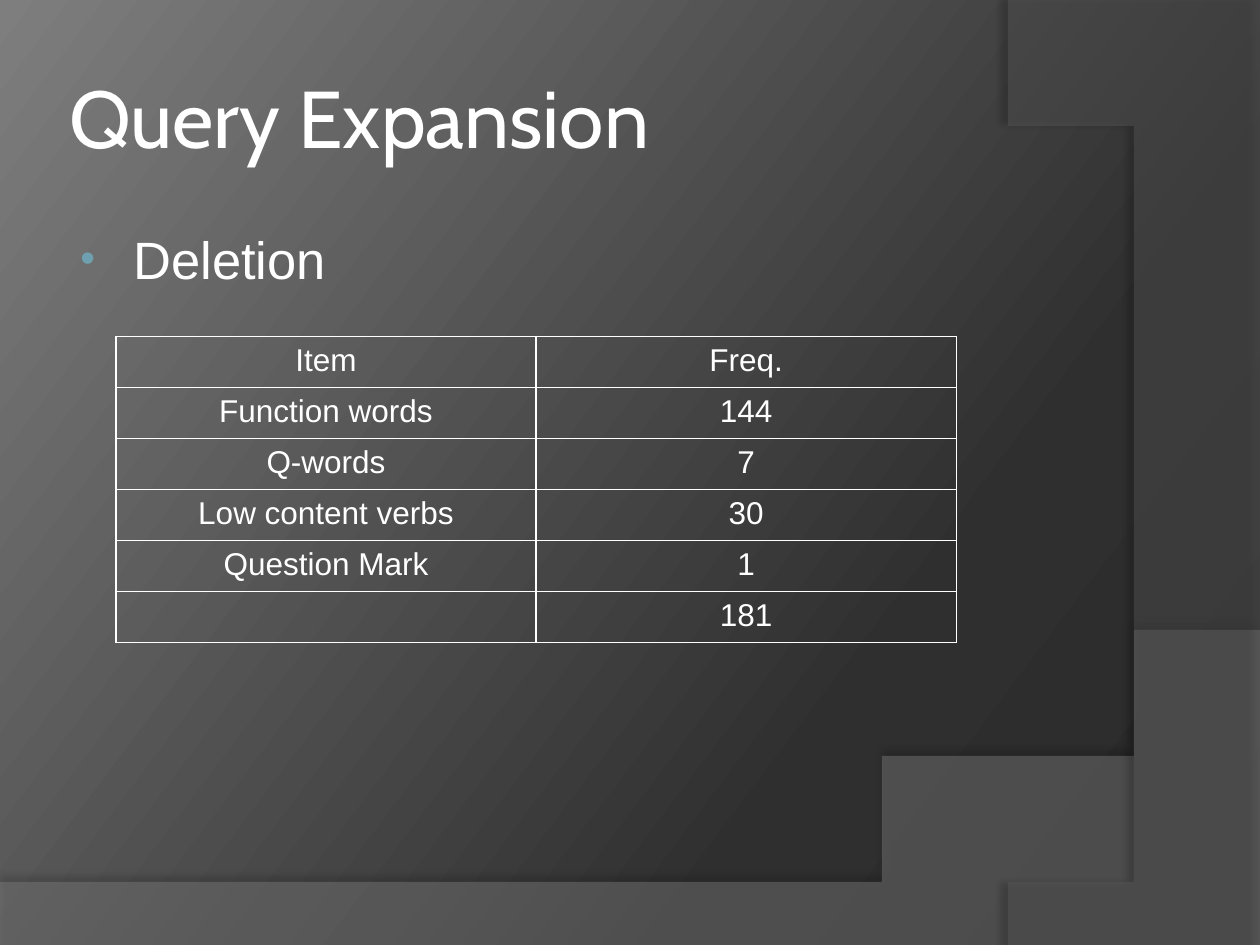
from copy import deepcopy
from lxml import etree
from pptx import Presentation
from pptx.dml.color import RGBColor
from pptx.enum.text import MSO_ANCHOR, PP_ALIGN
from pptx.oxml.ns import nsdecls, qn
from pptx.util import Emu, Inches, Pt

WIDTH, HEIGHT = 10, 7.5
WHITE = "FFFFFF"
TITLE = "Query Expansion"
BULLET = "Deletion"
FREQUENCIES = [
    ("Item", "Freq."),
    ("Function words", "144"),
    ("Q-words", "7"),
    ("Low content verbs", "30"),
    ("Question Mark", "1"),
    ("", "181"),
]
BACKDROP = [(0, "282828"), (0.3, "2F2F2F"), (1, "7E7E7E")]
WAVES = [
    {"outline": [[(0, 7.05)], [(0, 7.5)], [(10, 7.5)], [(10, 5.2)],
                 [(5.59, 7.29), (3.91, 7.19), (0, 7.05)]],
     "fill": "7F7F7F", "opacity": 45, "shade": 35, "distance": 3.5, "direction": 270},
    {"outline": [[(10, 0.02)], [(10, 7.5)], [(8.21, 7.5)],
                 [(9.35, 6.19), (10.18, 3), (8, 0)]],
     "fill": "5E5E5E", "opacity": 40, "shade": 45, "distance": 4, "direction": 180},
]
CURVE_STEPS = 40


def color(value):
    return RGBColor.from_string(value)


def add_xml(parent, xml):
    tag, rest = xml[1:].split(" ", 1)
    parent.append(etree.fromstring(f"<{tag} {nsdecls('a')} {rest}"))


def style(paragraph, size, font):
    for run in paragraph.runs:
        run.font.size = Pt(size)
        run.font.name = font
        run.font.color.rgb = color(WHITE)


def bezier(controls, t):
    while len(controls) > 1:
        controls = [tuple(a + (b - a) * t for a, b in zip(p, q))
                    for p, q in zip(controls, controls[1:])]
    return controls[0]


def trace(outline):
    points = list(outline[0])
    for segment in outline[1:]:
        controls = [points[-1], *segment]
        steps = CURVE_STEPS if len(segment) > 1 else 1
        points += [bezier(controls, i / steps) for i in range(1, steps + 1)]
    return points


def paint_backdrop(slide):
    fill = slide.background.fill
    fill.gradient()
    fill.gradient_angle = 360 - 217
    stop_list = slide._element.find(".//" + qn("a:gsLst"))
    stop_list.append(deepcopy(stop_list[-1]))
    for stop, (position, shade) in zip(fill.gradient_stops, BACKDROP):
        stop.position = position
        stop.color.rgb = color(shade)


def add_wave(slide, wave):
    start, *others = trace(wave["outline"])
    builder = slide.shapes.build_freeform(*start, scale=Inches(1))
    builder.add_line_segments(others, close=True)
    shape = builder.convert_to_shape()
    shape.fill.solid()
    shape.fill.fore_color.rgb = color(wave["fill"])
    shape.line.fill.background()
    shape.shadow.inherit = False
    properties = shape._element.spPr
    add_xml(properties.find(".//" + qn("a:srgbClr")), f'<a:alpha val="{wave["opacity"] * 1000}"/>')
    add_xml(properties.find(qn("a:effectLst")),
            f'<a:outerShdw blurRad="{Pt(4)}" dist="{Pt(wave["distance"])}" '
            f'dir="{wave["direction"] * 60000}" algn="ctr" rotWithShape="0">'
            f'<a:srgbClr val="000000"><a:alpha val="{wave["shade"] * 1000}"/></a:srgbClr>'
            '</a:outerShdw>')


def add_text(slide, text, top, height, anchor, size, font):
    box = slide.shapes.add_textbox(Inches(0.5), Inches(top), Inches(8.17), Inches(height))
    frame = box.text_frame
    frame.word_wrap = True
    frame.vertical_anchor = anchor
    frame.margin_left = frame.margin_right = Inches(0.05)
    frame.text = text
    style(frame.paragraphs[0], size, font)
    return frame


def add_bullet(frame):
    frame.margin_left = frame.margin_right = Inches(0.1)
    paragraph = frame.paragraphs[0]
    paragraph.space_before = Pt(6)
    properties = paragraph._p.get_or_add_pPr()
    properties.set("marL", str(Inches(0.46)))
    properties.set("indent", str(Inches(-0.42)))
    add_xml(properties, '<a:buClr ><a:srgbClr val="6EA0B0"/></a:buClr>')
    add_xml(properties, '<a:buSzPct val="80000"/>')
    add_xml(properties, '<a:buFont typeface="Arial"/>')
    add_xml(properties, '<a:buChar char="•"/>')


def add_frequencies(slide):
    table = slide.shapes.add_table(len(FREQUENCIES), 2, Inches(0.92), Inches(2.67),
                                   Inches(6.67), Inches(2.43)).table
    for row in table.rows:
        row.height = Emu(Inches(2.43) // len(FREQUENCIES))
    for r, entries in enumerate(FREQUENCIES):
        for c, entry in enumerate(entries):
            cell = table.cell(r, c)
            cell.text = entry
            paragraph = cell.text_frame.paragraphs[0]
            paragraph.alignment = PP_ALIGN.CENTER
            style(paragraph, 18, "Arial")
            properties = cell._tc.get_or_add_tcPr()
            for side in "LRTB":
                add_xml(properties, f'<a:ln{side} w="{Pt(1)}"><a:solidFill>'
                                    f'<a:srgbClr val="{WHITE}"/></a:solidFill></a:ln{side}>')
            cell.fill.background()


def main():
    deck = Presentation()
    deck.slide_width, deck.slide_height = Inches(WIDTH), Inches(HEIGHT)
    slide = deck.slides.add_slide(deck.slide_layouts[6])
    paint_backdrop(slide)
    for wave in WAVES:
        add_wave(slide, wave)
    add_text(slide, TITLE, 0.3, 1.25, MSO_ANCHOR.MIDDLE, 46, "Cabin")
    add_bullet(add_text(slide, BULLET, 1.75, 4.95, MSO_ANCHOR.TOP, 30, "Arial"))
    add_frequencies(slide)
    deck.save("out.pptx")


if __name__ == "__main__":
    main()
